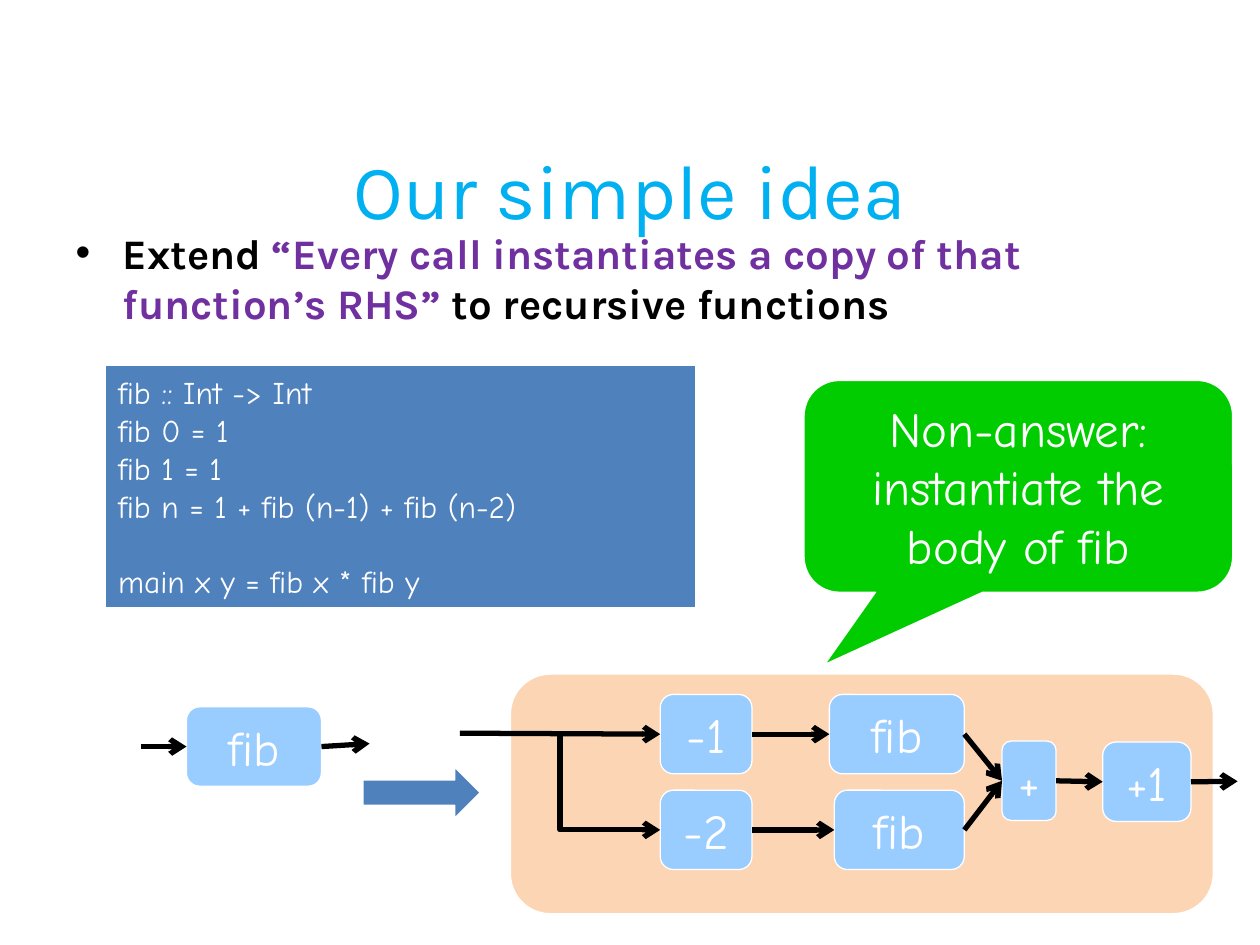
from lxml import etree
from pptx import Presentation
from pptx import util as u
from pptx.dml.color import RGBColor
from pptx.enum import shapes, text
from pptx.oxml import ns

SKY = RGBColor(0x00, 0xB0, 0xF0)
PURPLE = RGBColor(0x70, 0x30, 0xA0)
BLACK = RGBColor(0x00, 0x00, 0x00)
WHITE = RGBColor(0xFF, 0xFF, 0xFF)
BLUE = RGBColor(0x4F, 0x81, 0xBD)
GREEN = RGBColor(0x00, 0xCC, 0x00)
PEACH = RGBColor(0xFC, 0xD5, 0xB5)
PALE_BLUE = RGBColor(0x99, 0xCC, 0xFF)

KIND = shapes.MSO_SHAPE
LINE = shapes.MSO_CONNECTOR
LEFT_SITE, RIGHT_SITE = 1, 3
NODE_HEIGHT = 1.6

TITLE_FONT = {"name": "Karla", "size": u.Pt(44), "bold": False}
BODY_FONT = {"name": "Karla", "size": u.Pt(24), "bold": True}
CODE_FONT = {"name": "Comic Neue", "size": u.Pt(18)}
LABEL_FONT = {"name": "Comic Neue", "size": u.Pt(28)}

CODE_BLOCKS = [
    ["fib :: Int -> Int", "fib 0 = 1", "fib 1 = 1",
     "fib n = 1 + fib (n-1) + fib (n-2)"],
    ["main x y = fib x * fib y"],
]


def apply_format(target, values):
    for name, value in values.items():
        setattr(target, name, value)


def add_span(para, words, values, color):
    span = para.add_run()
    span.text = words
    apply_format(span.font, values)
    span.font.color.rgb = color


def place(holder, box):
    places = zip(("left", "top", "width", "height"), map(u.Cm, box))
    apply_format(holder, dict(places))
    holder.text_frame.auto_size = text.MSO_AUTO_SIZE.NONE


def add_block(page, kind, box, color):
    block = page.shapes.add_shape(kind, *map(u.Cm, box))
    block.shadow.inherit = False
    block.fill.solid()
    block.fill.fore_color.rgb = color
    block.line.color.rgb = WHITE
    block.line.width = u.Pt(0.75)
    apply_format(block.text_frame, {
        "word_wrap": True, "vertical_anchor": text.MSO_ANCHOR.MIDDLE})
    return block


def add_label(block, words):
    para = block.text_frame.paragraphs[0]
    para.alignment = text.PP_ALIGN.CENTER
    add_span(para, words, LABEL_FONT, WHITE)


def add_node(page, words, box):
    node = add_block(page, KIND.ROUNDED_RECTANGLE, box, PALE_BLUE)
    add_label(node, words)
    return node


def add_arrow(page, start, end, kind=LINE.STRAIGHT):
    points = [u.Cm(value) if isinstance(point, tuple) else 0
              for point in (start, end)
              for value in (point if isinstance(point, tuple) else (0, 0))]
    arrow = page.shapes.add_connector(kind, *points)
    if not isinstance(start, tuple):
        arrow.begin_connect(start, RIGHT_SITE)
    if not isinstance(end, tuple):
        arrow.end_connect(end, LEFT_SITE)
    arrow.line.color.rgb = BLACK
    arrow.line.width = u.Pt(3)
    etree.SubElement(arrow.line._get_or_add_ln(), ns.qn("a:tailEnd"), type="arrow")
    etree.SubElement(arrow._element.spPr, ns.qn("a:effectLst"))


def build_title(page, box):
    title = page.shapes.title
    place(title, box)
    title.text_frame.vertical_anchor = text.MSO_ANCHOR.MIDDLE
    para = title.text_frame.paragraphs[0]
    para.alignment = text.PP_ALIGN.CENTER
    add_span(para, "Our simple idea", TITLE_FONT, SKY)


def build_body(page, box):
    body = page.placeholders[1]
    place(body, box)
    para = body.text_frame.paragraphs[0]
    para.space_before = u.Pt(0)
    properties = para._p.get_or_add_pPr()
    properties.set("marL", str(u.Cm(0.95)))
    properties.set("indent", str(u.Cm(-0.95)))
    etree.SubElement(properties, ns.qn("a:buFont"), typeface="Arial")
    etree.SubElement(properties, ns.qn("a:buChar"), char="•")
    for words, color in (
            ("Extend ", BLACK),
            ("“Every call instantiates a copy of that function’s RHS” ", PURPLE),
            ("to recursive functions", BLACK)):
        add_span(para, words, BODY_FONT, color)


def build_code(page, box):
    frame = add_block(page, KIND.RECTANGLE, box, BLUE).text_frame
    para = frame.paragraphs[0]
    for block_index, lines in enumerate(CODE_BLOCKS):
        for line_index, words in enumerate(lines):
            if block_index or line_index:
                para = frame.add_paragraph()
            if block_index and not line_index:
                para.space_before = u.Pt(21.5)
            para.alignment = text.PP_ALIGN.LEFT
            add_span(para, words, CODE_FONT, WHITE)


def build_callout(page, box):
    callout = add_block(page, KIND.ROUNDED_RECTANGULAR_CALLOUT, box, GREEN)
    for index, value in enumerate((-0.452, 0.841, 0.167)):
        callout.adjustments[index] = value
    add_label(callout, "Non-answer: instantiate the body of fib")


def build_call(page, box):
    left, top, width, height = box
    node = add_node(page, "fib", box)
    middle = top + height / 2
    add_arrow(page, (left - 0.92, middle), node)
    add_arrow(page, node, (left + width + 0.97, middle - 0.06))


def build_expansion(page, box):
    left, top, width, height = box
    add_block(page, KIND.ROUNDED_RECTANGLE, box, PEACH)

    def node(words, x, y, node_width):
        return add_node(page, words, (left + x, top + y, node_width, NODE_HEIGHT))

    total = node("+", 9.91, 1.35, 1.09)
    increment = node("+1", 11.94, 1.37, 1.78)
    entry = (left - 1.02, top + 1.19)
    branches = (
        ("-1", 0.41, 6.43, 2.72, LINE.STRAIGHT),
        ("-2", 2.34, 6.53, 2.62, LINE.ELBOW),
    )
    for words, y, call_x, call_width, kind in branches:
        argument = node(words, 3.02, y, 1.85)
        call = node("fib", call_x, y, call_width)
        add_arrow(page, entry, argument, kind)
        add_arrow(page, argument, call)
        add_arrow(page, call, total)
    add_arrow(page, total, increment)
    add_arrow(page, increment, (left + width + 0.49, top + 2.16))


def main():
    deck = Presentation()
    deck.slide_width, deck.slide_height = u.Cm(25.4), u.Cm(19.05)
    page = deck.slides.add_slide(deck.slide_layouts[1])
    build_title(page, (1.27, 2.21, 22.86, 3.18))
    build_body(page, (1.27, 4.45, 22.86, 13.54))
    build_code(page, (2.13, 7.37, 11.89, 4.88))
    build_expansion(page, (10.29, 13.59, 14.17, 4.83))
    build_callout(page, (16.21, 7.67, 8.64, 4.27))
    build_call(page, (3.76, 14.25, 2.72, NODE_HEIGHT))
    add_block(page, KIND.RIGHT_ARROW, (7.32, 15.47, 2.36, 1.02), BLUE)
    deck.save("out.pptx")


if __name__ == "__main__":
    main()
